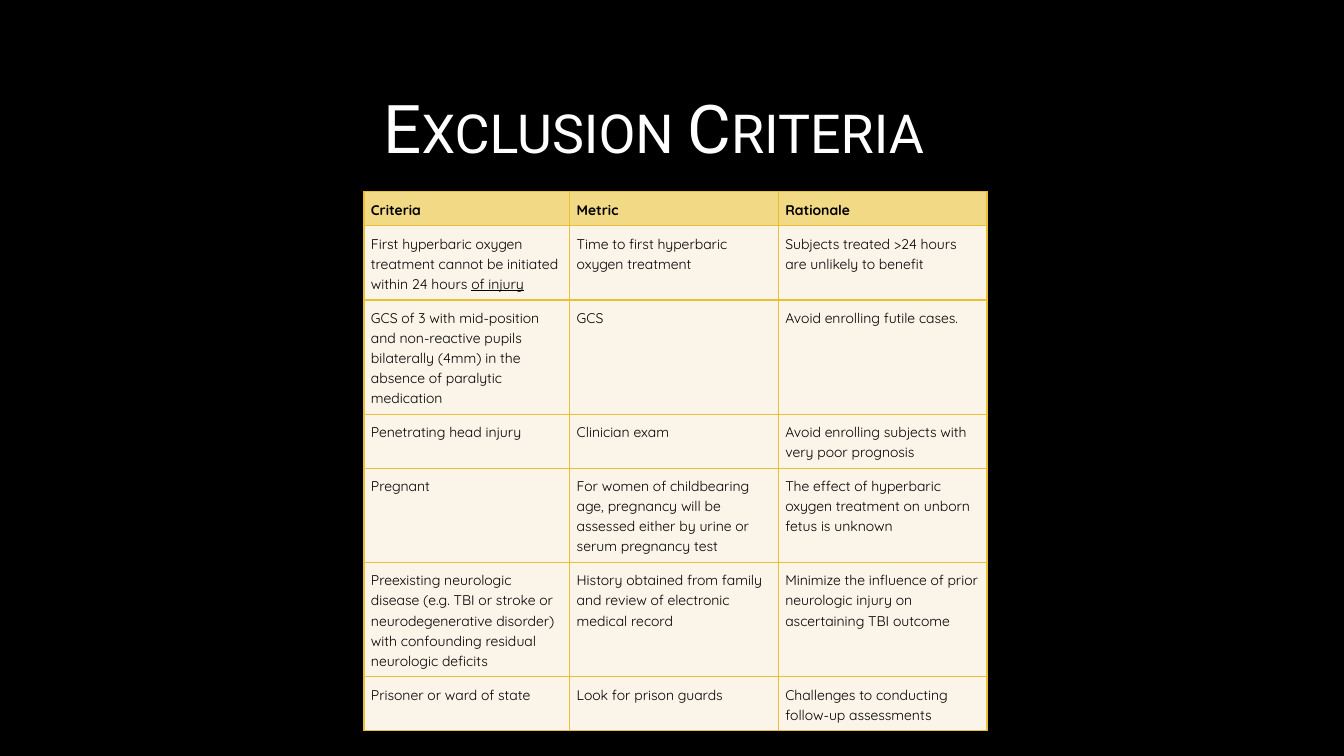
from pptx import Presentation
from pptx.dml.color import RGBColor
from pptx.enum.text import MSO_ANCHOR, PP_ALIGN
from pptx.oxml import parse_xml
from pptx.oxml.ns import nsdecls
from pptx.util import Pt

TITLE = "Exclusion Criteria"
HEAD = ("Criteria", "Metric", "Rationale")
LATE = "First hyperbaric oxygen treatment cannot be initiated within 24 hours "
ROWS = [
    ((LATE, "of injury"),
     "Time to first hyperbaric oxygen treatment",
     "Subjects treated >24 hours are unlikely to benefit"),
    ("GCS of 3 with mid-position and non-reactive pupils bilaterally (4mm) in the absence of paralytic medication",
     "GCS",
     "Avoid enrolling futile cases."),
    ("Penetrating head injury",
     "Clinician exam",
     "Avoid enrolling subjects with very poor prognosis"),
    ("Pregnant",
     "For women of childbearing age, pregnancy will be assessed either by urine or serum pregnancy test",
     "The effect of hyperbaric oxygen treatment on unborn fetus is unknown"),
    ("Preexisting neurologic disease (e.g. TBI or stroke or neurodegenerative disorder) with confounding residual neurologic deficits",
     "History obtained from family and review of electronic medical record",
     "Minimize the influence of prior neurologic injury on ascertaining TBI outcome"),
    ("Prisoner or ward of state",
     "Look for prison guards",
     "Challenges to conducting follow-up assessments"),
]
LINES = (1, 3, 5, 2, 4, 5, 2)
WIDTHS = (147, 149, 149)
LEFT, TOP = 260, 137
PAD, LEAD, INSET = 9.8, 14.35, 5

BLACK = RGBColor(0, 0, 0)
WHITE = RGBColor(255, 255, 255)
GOLD = RGBColor(0xE9, 0xBF, 0x35)
SAND = RGBColor(0xF2, 0xD9, 0x86)
CREAM = RGBColor(0xFB, 0xF4, 0xE8)


def write(para, text, size=10, font="Quicksand", color=BLACK, bold=False,
          under=False, caps=False, align=PP_ALIGN.LEFT, space=1.15):
    para.alignment = align
    para.line_spacing = space
    run = para.add_run()
    run.text = text
    run.font.size = Pt(size)
    run.font.name = font
    run.font.color.rgb = color
    run.font.bold = bold
    run.font.underline = under
    if caps:
        run.font._element.set("cap", "small")


def edge(cell):
    props = cell._tc.get_or_add_tcPr()
    for pos, side in enumerate(("lnL", "lnR", "lnT", "lnB")):
        props.insert(pos, parse_xml(
            f'<a:{side} {nsdecls("a")} w="{Pt(1)}"><a:solidFill>'
            f'<a:srgbClr val="{GOLD}"/></a:solidFill></a:{side}>'))


def fill(cell, text, back, bold):
    cell.fill.solid()
    cell.fill.fore_color.rgb = back
    cell.margin_left = cell.margin_right = Pt(INSET)
    cell.margin_top = cell.margin_bottom = Pt(INSET)
    cell.vertical_anchor = MSO_ANCHOR.TOP
    parts = (text,) if isinstance(text, str) else text
    for pos, part in enumerate(parts):
        write(cell.text_frame.paragraphs[0], part, bold=bold, under=pos > 0)
    edge(cell)


def main():
    deck = Presentation()
    deck.slide_width, deck.slide_height = Pt(960), Pt(540)
    slide = deck.slides.add_slide(deck.slide_layouts[5])
    slide.background.fill.solid()
    slide.background.fill.fore_color.rgb = BLACK

    title = slide.shapes.title
    title.left, title.top = Pt(128), Pt(43)
    title.width, title.height = Pt(678), Pt(101.5)
    title.text_frame.vertical_anchor = MSO_ANCHOR.MIDDLE
    write(title.text_frame.paragraphs[0], TITLE, size=48, font="Roboto",
          color=WHITE, caps=True, align=PP_ALIGN.CENTER, space=0.9)

    highs = [PAD + LEAD * count for count in LINES]
    grid = slide.shapes.add_table(
        len(highs), len(WIDTHS), Pt(LEFT), Pt(TOP),
        Pt(sum(WIDTHS)), Pt(sum(highs))).table
    grid.horz_banding = False
    for col, width in zip(grid.columns, WIDTHS):
        col.width = Pt(width)
    for row, high, texts in zip(grid.rows, highs, [HEAD] + ROWS):
        row.height = Pt(high)
        top = texts is HEAD
        for cell, text in zip(row.cells, texts):
            fill(cell, text, SAND if top else CREAM, top)

    deck.save("out.pptx")


if __name__ == "__main__":
    main()
